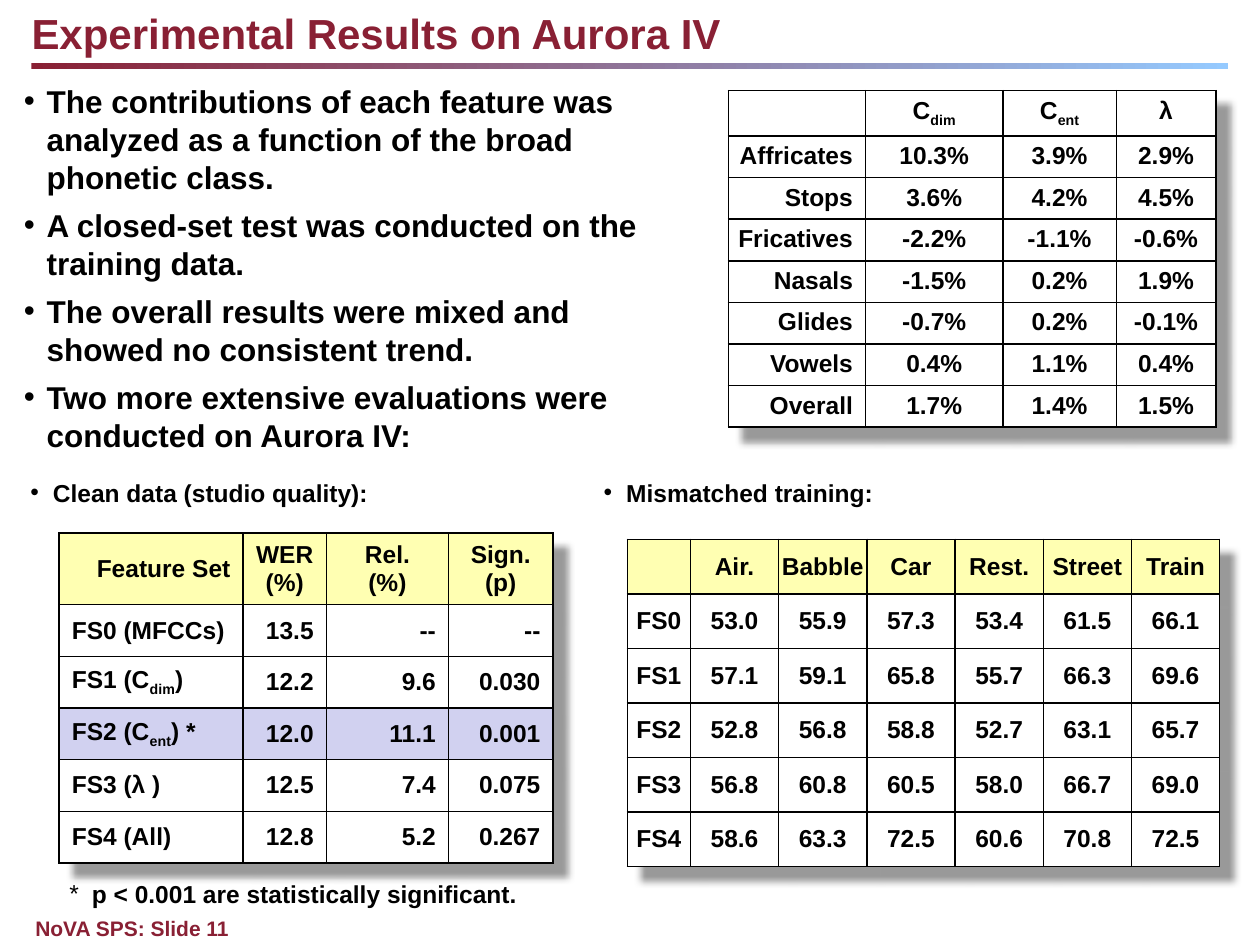
from lxml import etree
from pptx import Presentation
from pptx.dml.color import RGBColor
from pptx.enum.shapes import MSO_SHAPE
from pptx.enum.text import MSO_ANCHOR as ANCHOR, MSO_AUTO_SIZE as AUTO_SIZE, PP_ALIGN as ALIGN
from pptx.oxml import parse_xml
from pptx.oxml.ns import nsdecls, qn
from pptx.util import Inches, Pt

MAROON = RGBColor(0x89, 0x20, 0x34)
SKY = RGBColor(0x95, 0xCA, 0xFF)
BLACK = RGBColor(0, 0, 0)
WHITE = RGBColor(0xFF, 0xFF, 0xFF)
YELLOW = RGBColor(0xFF, 0xFF, 0xB2)
LAVENDER = RGBColor(0xD1, 0xD1, 0xF0)

BORDER = ('<a:{side} {ns} w="12700"><a:solidFill><a:srgbClr val="000000"/>'
          '</a:solidFill></a:{side}>')
SHADOW = ('<a:effectLst {ns}><a:outerShdw blurRad="50800" dist="139700" dir="2700000">'
          '<a:srgbClr val="000000"><a:alpha val="40000"/></a:srgbClr>'
          '</a:outerShdw></a:effectLst>')


def write_text(shape, box, lines, size, color, bullet=None, space_after=0):
    """Place a shape and fill it with bold, optionally bulleted, paragraphs."""
    shape.left, shape.top, shape.width, shape.height = [Inches(value) for value in box]
    frame = shape.text_frame
    frame.text = "\n".join(lines)
    frame.word_wrap = True
    frame.auto_size = AUTO_SIZE.NONE
    frame.vertical_anchor = ANCHOR.TOP
    frame.margin_left = frame.margin_top = frame.margin_right = frame.margin_bottom = 0
    for paragraph in frame.paragraphs:
        paragraph.alignment = ALIGN.LEFT
        paragraph.space_before = Pt(0)
        paragraph.space_after = Pt(space_after)
        if bullet:
            properties = paragraph._p.get_or_add_pPr()
            properties.set("marL", str(Inches(0.18)))
            properties.set("indent", str(-Inches(0.18)))
            etree.SubElement(properties, qn("a:buFont")).set("typeface", "Arial")
            etree.SubElement(properties, qn("a:buChar")).set("char", bullet)
        for run in paragraph.runs:
            font = run.font
            font.name, font.size, font.bold = "Arial", Pt(size), True
            font.color.rgb = color


def add_grid(slide, corner, widths, heights, rows, aligns, margins, anchor,
             header_fill=WHITE, marked_row=None):
    """Add a ruled table with a shadow; _x_ in a text makes x a subscript."""
    left, top = corner
    frame = slide.shapes.add_table(len(rows), len(widths), Inches(left), Inches(top),
                                   Inches(sum(widths)), Inches(sum(heights)))
    table = frame.table
    table.first_row = table.horz_banding = False
    table._tbl.tblPr.insert(0, parse_xml(SHADOW.format(ns=nsdecls("a"))))
    for column, width in zip(table.columns, widths):
        column.width = Inches(width)
    for row, height in zip(table.rows, heights):
        row.height = Inches(height)
    for row_index, texts in enumerate(rows):
        for column_index, text in enumerate(texts):
            cell = table.cell(row_index, column_index)
            side, vertical = margins if text else (0, 0)
            cell.margin_left = cell.margin_right = Inches(side)
            cell.margin_top = cell.margin_bottom = Inches(vertical)
            cell.vertical_anchor = anchor
            cell.fill.solid()
            cell.fill.fore_color.rgb = (header_fill if row_index == 0 else
                                        LAVENDER if row_index == marked_row else WHITE)
            for index, edge in enumerate(("lnL", "lnR", "lnT", "lnB")):
                cell._tc.tcPr.insert(index, parse_xml(BORDER.format(side=edge, ns=nsdecls("a"))))

            paragraph = cell.text_frame.paragraphs[0]
            paragraph.alignment = aligns[column_index]
            pieces = text.split("_")
            paragraph.text = pieces[0]
            for piece in filter(None, pieces[1:]):
                paragraph.add_run().text = piece
            for run_index, run in enumerate(paragraph.runs):
                font = run.font
                font.name, font.size, font.bold = "Arial", Pt(14), True
                font.color.rgb = BLACK
                if run_index == 1 and len(pieces) > 1:
                    font._element.set("baseline", "-25000")
    return table


presentation = Presentation()
presentation.slide_width, presentation.slide_height = Inches(10), Inches(7.5)
slide = presentation.slides.add_slide(presentation.slide_layouts[1])

# Gradient rule under the title
rule = slide.shapes.add_shape(MSO_SHAPE.RECTANGLE, Inches(0.25), Inches(0.5),
                              Inches(9.5), Inches(0.05))
rule.shadow.inherit = False
rule.line.fill.background()
rule.fill.gradient()
rule.fill.gradient_angle = 0
for stop, color in zip(rule.fill.gradient_stops, (MAROON, SKY)):
    stop.color.rgb = color

# Title and main bullets
write_text(slide.shapes.title, (0.25, 0.06, 7.5, 0.4),
           ["Experimental Results on Aurora IV"], 24, MAROON)
write_text(slide.placeholders[1], (0.19, 0.65, 5.28, 2.99), [
    "The contributions of each feature was analyzed as a function of the broad phonetic class.",
    "A closed-set test was conducted on the training data.",
    "The overall results were mixed and showed no consistent trend.",
    "Two more extensive evaluations were conducted on Aurora IV:",
], 18, BLACK, "•", 6)

# Table captions, footnote and footer
for box, text, size, color, bullet in [
    ((0.24, 3.79, 3.59, 0.24), "Clean data (studio quality):", 14, BLACK, "•"),
    ((4.79, 3.79, 4.79, 0.24), "Mismatched training:", 14, BLACK, "•"),
    ((0.55, 6.98, 3.56, 0.36), "p < 0.001 are statistically significant.", 14, BLACK, "*"),
    ((0.28, 7.27, 8.92, 0.2), "NoVA SPS: Slide 11", 12, MAROON, None),
]:
    write_text(slide.shapes.add_textbox(0, 0, 0, 0), box, [text], size, color, bullet)

# Results by phonetic class
class_table = add_grid(slide, (5.78, 0.72), [1.09, 1.09, 0.9, 0.79], [0.36] + [0.33] * 7, [
    ["", "C_dim_", "C_ent_", "λ"],
    ["Affricates", "10.3%", "3.9%", "2.9%"],
    ["Stops", "3.6%", "4.2%", "4.5%"],
    ["Fricatives", "-2.2%", "-1.1%", "-0.6%"],
    ["Nasals", "-1.5%", "0.2%", "1.9%"],
    ["Glides", "-0.7%", "0.2%", "-0.1%"],
    ["Vowels", "0.4%", "1.1%", "0.4%"],
    ["Overall", "1.7%", "1.4%", "1.5%"],
], [ALIGN.RIGHT] + [ALIGN.CENTER] * 3, (0, 0.05), ANCHOR.TOP)
for row_index in range(1, 8):
    class_table.cell(row_index, 0).margin_right = Inches(0.1)

# Results on clean data
clean_table = add_grid(slide, (0.47, 4.23), [1.46, 0.66, 0.97, 0.83], [0.57] + [0.41] * 5, [
    ["Feature Set", "WER\n(%)", "Rel.\n(%)", "Sign.\n(p)"],
    ["FS0 (MFCCs)", "13.5", "--", "--"],
    ["FS1 (C_dim_)", "12.2", "9.6", "0.030"],
    ["FS2 (C_ent_) *", "12.0", "11.1", "0.001"],
    ["FS3 (λ )", "12.5", "7.4", "0.075"],
    ["FS4 (All)", "12.8", "5.2", "0.267"],
], [ALIGN.LEFT] + [ALIGN.RIGHT] * 3, (0.1, 0.05), ANCHOR.MIDDLE, YELLOW, marked_row=3)
for column_index in range(4):
    header = clean_table.cell(0, column_index).text_frame.paragraphs[0]
    header.alignment = ALIGN.CENTER if column_index else ALIGN.RIGHT

# Results with mismatched training
add_grid(slide, (4.98, 4.28), [0.5] + [0.7] * 6, [2.6 / 6] * 6, [
    ["", "Air.", "Babble", "Car", "Rest.", "Street", "Train"],
    ["FS0", "53.0", "55.9", "57.3", "53.4", "61.5", "66.1"],
    ["FS1", "57.1", "59.1", "65.8", "55.7", "66.3", "69.6"],
    ["FS2", "52.8", "56.8", "58.8", "52.7", "63.1", "65.7"],
    ["FS3", "56.8", "60.8", "60.5", "58.0", "66.7", "69.0"],
    ["FS4", "58.6", "63.3", "72.5", "60.6", "70.8", "72.5"],
], [ALIGN.CENTER] * 7, (0, 0.1), ANCHOR.MIDDLE, YELLOW)

presentation.save("out.pptx")
